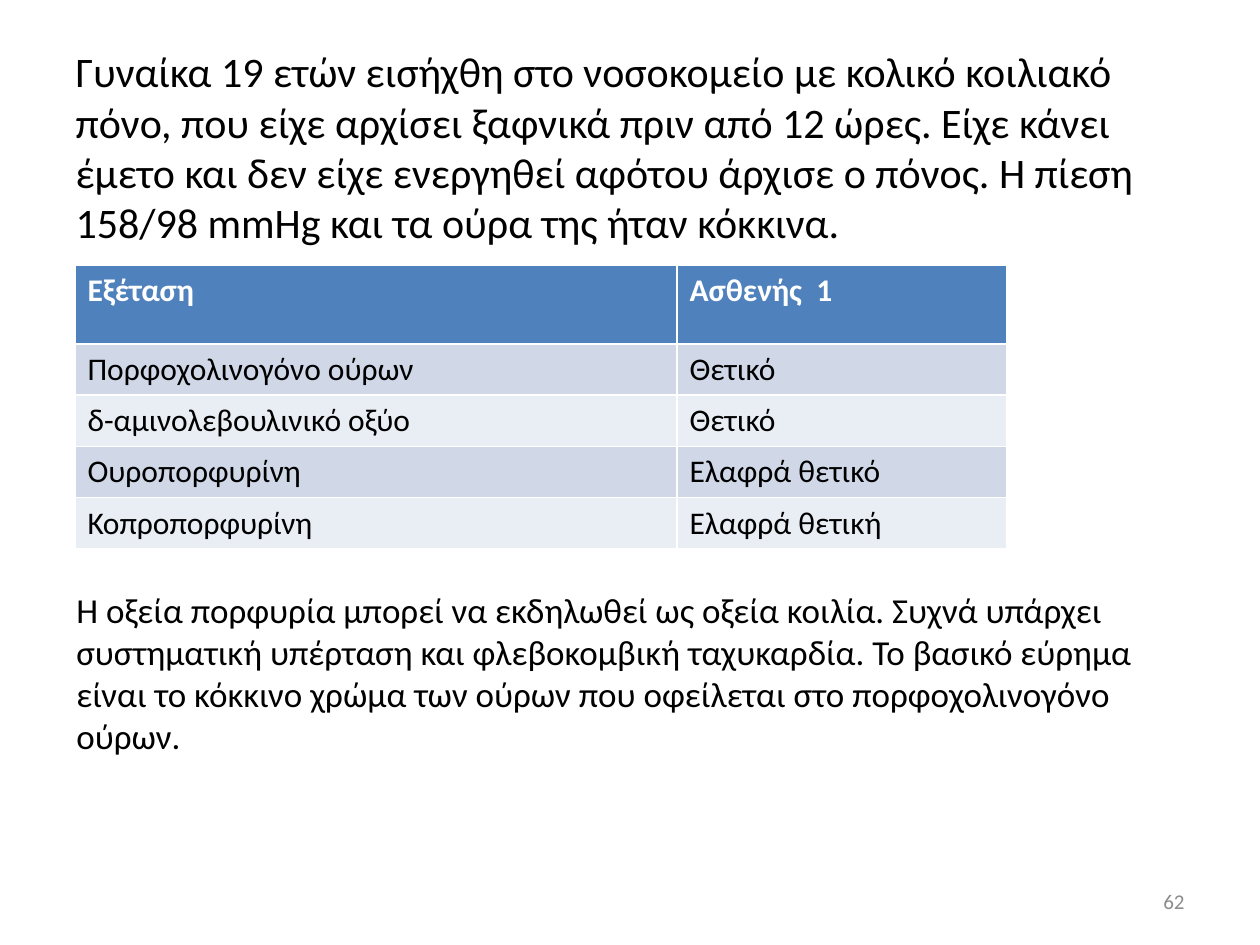
from dataclasses import dataclass

from pptx import Presentation
from pptx.dml.color import RGBColor
from pptx.enum.text import MSO_ANCHOR, MSO_AUTO_SIZE, PP_ALIGN
from pptx.util import Pt

LEFT, RIGHT = PP_ALIGN.LEFT, PP_ALIGN.RIGHT
TOP, MIDDLE = MSO_ANCHOR.TOP, MSO_ANCHOR.MIDDLE
NO_FIT = MSO_AUTO_SIZE.NONE
EMU_PER_PX = 914400 / 126


@dataclass(frozen=True)
class Theme:
    font: str = "Calibri"
    text: str = "000000"
    light: str = "FFFFFF"
    muted: str = "8C8C8C"
    header: str = "4F81BD"
    bands: tuple = ("D0D8E8", "E9EDF4")
    title_size: int = 24
    body_size: int = 20
    table_size: int = 18
    number_size: int = 12


THEME = Theme()

TITLE = (
    "Γυναίκα 19 ετών εισήχθη στο νοσοκομείο με κολικό κοιλιακό πόνο, "
    "που είχε αρχίσει ξαφνικά πριν από 12 ώρες. Είχε κάνει έμετο και δεν "
    "είχε ενεργηθεί αφότου άρχισε ο πόνος. Η πίεση 158/98 mmΗg και τα ούρα "
    "της ήταν κόκκινα."
)
RESULTS = [
    ("Εξέταση", "Ασθενής  1"),
    ("Πορφοχολινογόνο ούρων", "Θετικό"),
    ("δ-αμινολεβουλινικό οξύο", "Θετικό"),
    ("Ουροπορφυρίνη", "Ελαφρά θετικό"),
    ("Κοπροπορφυρίνη", "Ελαφρά θετική"),
]
COMMENT = (
    "Η οξεία πορφυρία μπορεί να εκδηλωθεί ως οξεία κοιλία. Συχνά υπάρχει "
    "συστηματική υπέρταση και φλεβοκομβική ταχυκαρδία. Το βασικό εύρημα είναι "
    "το κόκκινο χρώμα των ούρων που οφείλεται στο πορφοχολινογόνο ούρων."
)


def px(n):
    return round(n * EMU_PER_PX)


def write(tf, text, size, color=THEME.text, bold=False, align=LEFT):
    p = tf.paragraphs[0]
    p.alignment = align
    r = p.add_run()
    r.text = text
    r.font.name = THEME.font
    r.font.size = Pt(size)
    r.font.bold = bold
    r.font.color.rgb = RGBColor.from_string(color)


def add_title(s, box, text):
    sp = s.shapes.title
    sp.left, sp.top, sp.width, sp.height = map(px, box)
    tf = sp.text_frame
    tf.auto_size = NO_FIT
    tf.vertical_anchor = MIDDLE
    write(tf, text, THEME.title_size)


def add_text(s, box, text, size, anchor=TOP, **fmt):
    tf = s.shapes.add_textbox(*map(px, box)).text_frame
    tf.word_wrap = True
    tf.vertical_anchor = anchor
    write(tf, text, size, **fmt)


def add_results(s, box, rows, first_col, header_height):
    x, y, w, h = box
    table = s.shapes.add_table(len(rows), len(rows[0]), *map(px, box)).table
    for col, width in zip(table.columns, (first_col, w - first_col)):
        col.width = px(width)
    row_height = (h - header_height) / (len(rows) - 1)
    for i, values in enumerate(rows):
        head = i == 0
        table.rows[i].height = px(header_height if head else row_height)
        fill = THEME.header if head else THEME.bands[(i - 1) % 2]
        color = THEME.light if head else THEME.text
        for j, value in enumerate(values):
            cell = table.cell(i, j)
            cell.fill.solid()
            cell.fill.fore_color.rgb = RGBColor.from_string(fill)
            write(cell.text_frame, value, THEME.table_size, color=color, bold=head)


def main():
    prs = Presentation()
    prs.slide_width, prs.slide_height = px(1260), px(945)
    s = prs.slides.add_slide(prs.slide_layouts[5])
    add_title(s, (63, 38, 1134, 217), TITLE)
    add_text(s, (903, 876, 294, 50), "62", THEME.number_size,
             anchor=MIDDLE, color=THEME.muted, align=RIGHT)
    add_results(s, (75, 265, 932, 284), RESULTS, first_col=602, header_height=79)
    add_text(s, (64, 582, 1142, 183), COMMENT, THEME.body_size)
    prs.save("out.pptx")


if __name__ == "__main__":
    main()
